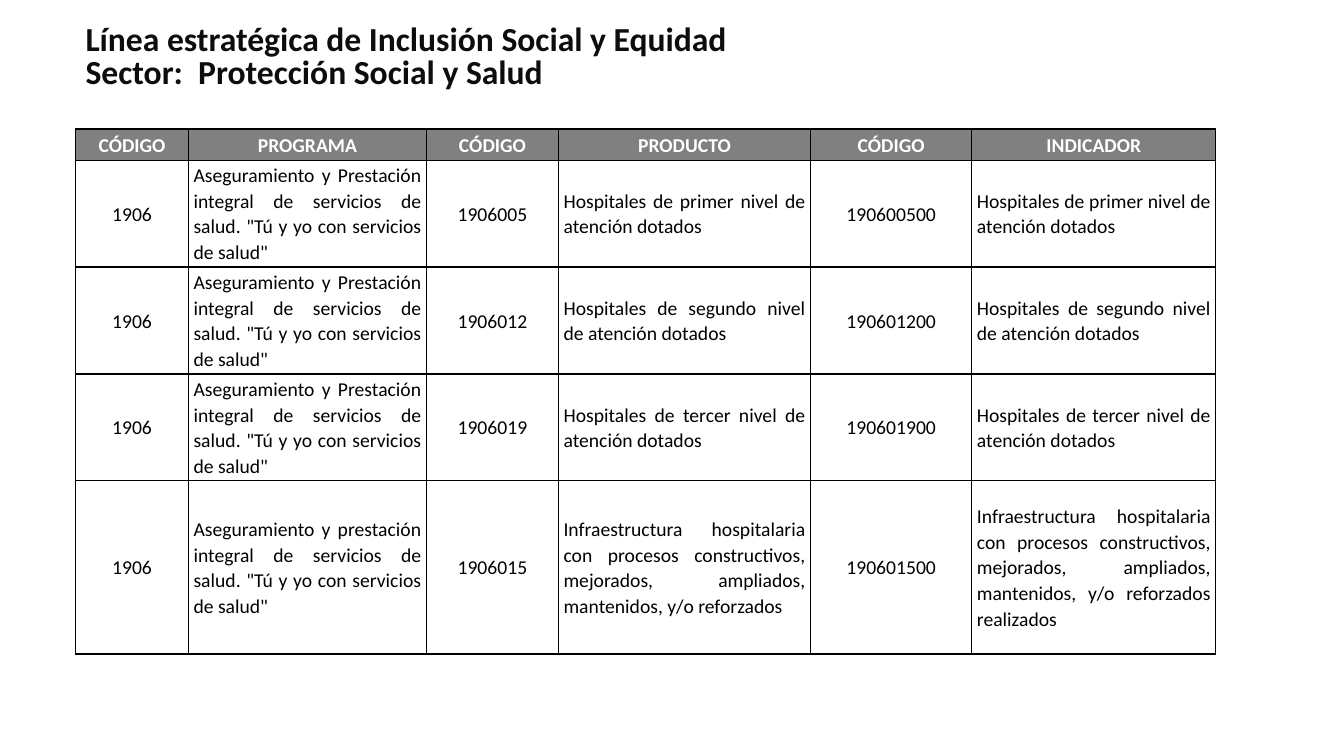
from lxml.etree import SubElement
from pptx import Presentation
from pptx.dml.color import RGBColor
from pptx.enum.text import MSO_ANCHOR, MSO_AUTO_SIZE, PP_ALIGN
from pptx.oxml.ns import qn
from pptx.util import Inches, Pt

TITLE = [
    "Línea estratégica de Inclusión Social y Equidad",
    "Sector:  Protección Social y Salud",
]
HEADS = ["CÓDIGO", "PROGRAMA", "CÓDIGO", "PRODUCTO", "CÓDIGO", "INDICADOR"]
PLAN = 'Aseguramiento y Prestación integral de servicios de salud. "Tú y yo con servicios de salud"'
WORKS = "Infraestructura hospitalaria con procesos constructivos, mejorados, ampliados, mantenidos, y/o reforzados"
LEVELS = [("1906005", "primer"), ("1906012", "segundo"), ("1906019", "tercer")]
WIDTHS = [1.12, 2.36, 1.31, 2.5, 1.6, 2.42]
HEIGHTS = [0.31, 1.06, 1.06, 1.06, 1.72]

FONT = "Calibri"
BLACK = RGBColor(0, 0, 0)
WHITE = RGBColor(255, 255, 255)
GRAY = RGBColor(128, 128, 128)
INK = RGBColor(13, 13, 13)


def add_run(para, text, size, color, bold):
    run = para.add_run()
    run.text = text
    font = run.font
    font.name, font.size, font.bold = FONT, Pt(size), bold
    font.color.rgb = color


def add_edges(cell):
    props = cell._tc.get_or_add_tcPr()
    for side in ("lnL", "lnR", "lnT", "lnB"):
        line = SubElement(props, qn("a:" + side), w=str(Pt(1)))
        fill = SubElement(line, qn("a:solidFill"))
        SubElement(fill, qn("a:srgbClr"), val=str(BLACK))


def fill_cell(cell, text, head):
    cell.margin_left = cell.margin_right = Inches(0.05)
    cell.margin_top = cell.margin_bottom = 0
    cell.vertical_anchor = MSO_ANCHOR.MIDDLE
    add_edges(cell)
    cell.fill.solid()
    cell.fill.fore_color.rgb = GRAY if head else WHITE
    para = cell.text_frame.paragraphs[0]
    center = head or text.isdigit()
    para.alignment = PP_ALIGN.CENTER if center else PP_ALIGN.JUSTIFY
    para.line_spacing = 1.07
    add_run(para, text, 14, WHITE if head else BLACK, head)


def add_title(slide):
    box = slide.shapes.add_textbox(Inches(0.75), Inches(0.19), Inches(7.15), Inches(0.78))
    frame = box.text_frame
    frame.word_wrap = True
    frame.auto_size = MSO_AUTO_SIZE.SHAPE_TO_FIT_TEXT
    for i, text in enumerate(TITLE):
        para = frame.add_paragraph() if i else frame.paragraphs[0]
        para.line_spacing = Pt(24)
        add_run(para, text, 24, INK, True)


def add_grid(slide):
    rows = [HEADS]
    for code, level in LEVELS:
        goal = f"Hospitales de {level} nivel de atención dotados"
        rows.append(["1906", PLAN, code, goal, code + "00", goal])
    plan = PLAN.replace("Prestación", "prestación")
    rows.append(["1906", plan, "1906015", WORKS, "190601500", WORKS + " realizados"])
    table = slide.shapes.add_table(
        len(rows), len(HEADS), Inches(0.75), Inches(1.28),
        Inches(sum(WIDTHS)), Inches(sum(HEIGHTS))).table
    for col, width in zip(table.columns, WIDTHS):
        col.width = Inches(width)
    for r, (row, height) in enumerate(zip(rows, HEIGHTS)):
        table.rows[r].height = Inches(height)
        for c, text in enumerate(row):
            fill_cell(table.cell(r, c), text, r == 0)


def main():
    deck = Presentation()
    deck.slide_width, deck.slide_height = Inches(13.33), Inches(7.5)
    slide = deck.slides.add_slide(deck.slide_layouts[6])
    add_grid(slide)
    add_title(slide)
    deck.save("out.pptx")


if __name__ == "__main__":
    main()
